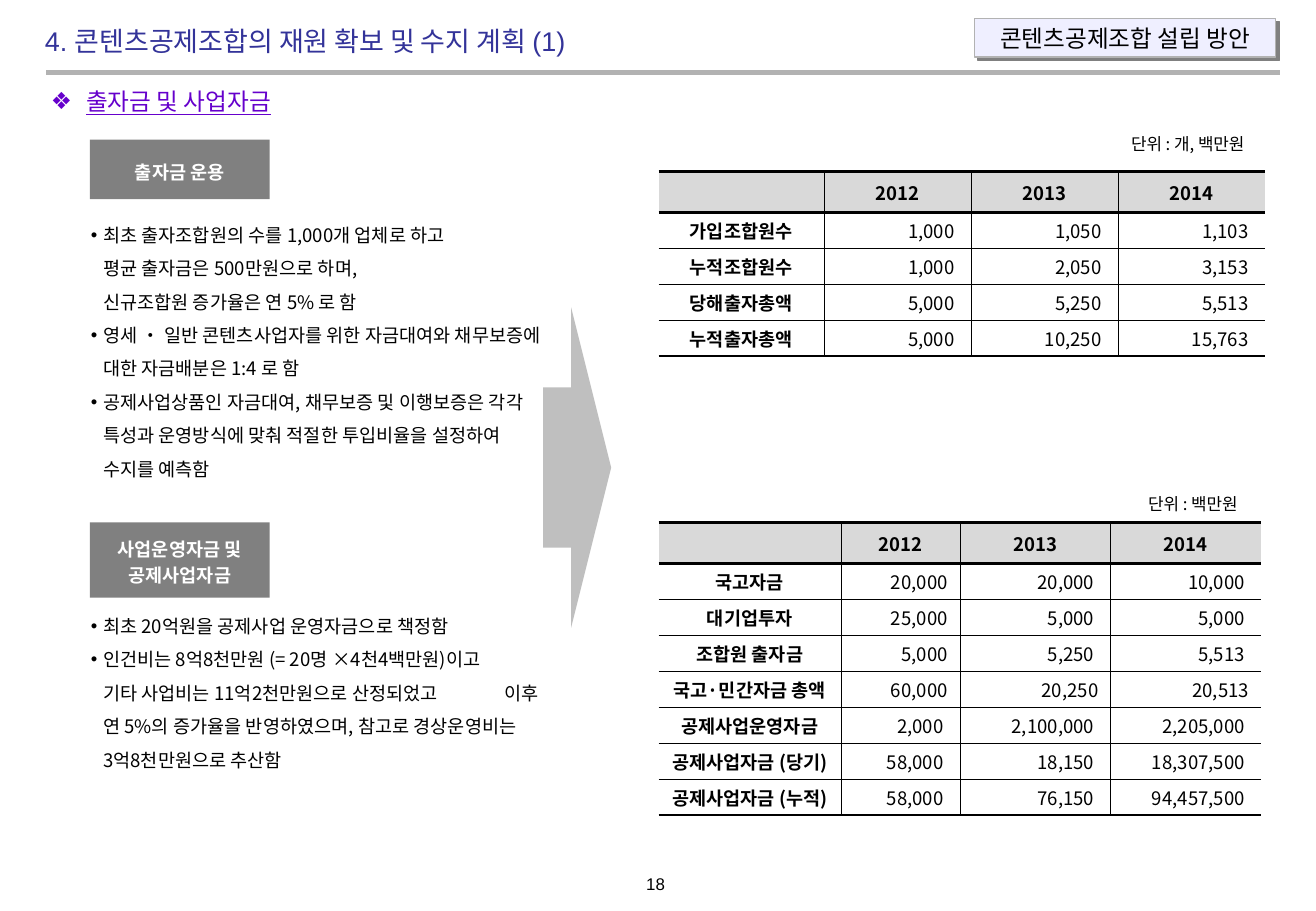
"""Build the slide on the capital and business funds of the content mutual aid association."""
from lxml.etree import SubElement
from pptx import Presentation
from pptx.dml.color import RGBColor
from pptx.enum.shapes import MSO_CONNECTOR, MSO_SHAPE
from pptx.enum.text import MSO_ANCHOR, MSO_AUTO_SIZE, PP_ALIGN
from pptx.oxml.ns import qn
from pptx.util import Inches, Pt

COLORS = {
    "black": "000000", "white": "FFFFFF", "title": "333399", "heading": "6600CC",
    "box": "808080", "arrow": "BFBFBF", "rule": "B2B2B2", "tag": "EFEFFF", "header": "D9D9D9",
}
KOREAN = "Noto Sans CJK KR"


def write_text(frame, lines, color="black", align=PP_ALIGN.LEFT, spacing=1.0, **font_format):
    """Fill a text frame with one paragraph per line and format it."""
    frame.vertical_anchor = MSO_ANCHOR.MIDDLE
    for index, line in enumerate(lines):
        paragraph = frame.paragraphs[0] if index == 0 else frame.add_paragraph()
        paragraph.text = line
        for name, value in {"alignment": align, "line_spacing": spacing}.items():
            setattr(paragraph, name, value)
        for run in paragraph.runs:
            for name, value in {"name": KOREAN, "size": Pt(11), **font_format}.items():
                setattr(run.font, name, value)
            run.font.color.rgb = RGBColor.from_string(COLORS[color])
            SubElement(run.font._element, qn("a:ea"), typeface=KOREAN)


def set_bullet(paragraph, character, indent):
    """Give a paragraph a hanging indent, with a bullet unless the character is empty."""
    properties = paragraph._p.get_or_add_pPr()
    properties.set("marL", str(Inches(indent)))
    properties.set("indent", str(Inches(-indent) if character else 0))
    if character:
        SubElement(properties, qn("a:buFont"), typeface="Arial")
        SubElement(properties, qn("a:buChar"), char=character)


presentation = Presentation()
presentation.slide_width = Inches(10.83)
presentation.slide_height = Inches(7.5)
slide = presentation.slides.add_slide(presentation.slide_layouts[5])
shapes = slide.shapes

header_rule = shapes.add_connector(
    MSO_CONNECTOR.STRAIGHT, Inches(0.38), Inches(0.6), Inches(10.53), Inches(0.6))
header_rule.line.color.rgb = RGBColor.from_string(COLORS["rule"])
header_rule.line.width = Pt(3)
SubElement(header_rule._element.spPr, qn("a:effectLst"))

title = shapes.title
title_place = {"left": 0.27, "top": 0.15, "width": 4.92, "height": 0.37}
for name, value in title_place.items():
    setattr(title, name, Inches(value))
title.text_frame.auto_size = MSO_AUTO_SIZE.NONE
title.text_frame.word_wrap = False
write_text(title.text_frame, ["4. 콘텐츠공제조합의 재원 확보 및 수지 계획 (1)"],
           "title", name="Arial", size=Pt(16))

labels = [
    (0.32, 0.68, 2.23, 0.31, "출자금 및 사업자금",
     {"color": "heading", "name": "Arial", "size": Pt(14), "underline": True}),
    (9.21, 0.98, 1.33, 0.4, "단위 : 개, 백만원", {"size": Pt(10)}),
    (9.35, 3.95, 1.33, 0.4, "단위 : 백만원", {"size": Pt(10)}),
    (4.96, 7.15, 0.87, 0.26, "18", {"name": "Arial", "size": Pt(10), "align": PP_ALIGN.CENTER}),
]
for left, top, width, height, text, text_format in labels:
    label = shapes.add_textbox(Inches(left), Inches(top), Inches(width), Inches(height))
    label.text_frame.word_wrap = True
    write_text(label.text_frame, [text], **text_format)
    if text_format.get("underline"):
        set_bullet(label.text_frame.paragraphs[0], "❖", 0.29)

blocks = [
    (MSO_SHAPE.RECTANGLE, 0.74, 1.15, 1.48, 0.49, "box", ["출자금 운용"]),
    (MSO_SHAPE.RECTANGLE, 0.74, 4.3, 1.48, 0.62, "box", ["사업운영자금 및", "공제사업자금"]),
    (MSO_SHAPE.RIGHT_ARROW, 4.47, 2.53, 0.56, 2.64, "arrow", []),
    (MSO_SHAPE.RECTANGLE, 8.02, 0.15, 2.48, 0.32, "tag", ["콘텐츠공제조합 설립 방안"]),
]
for kind, left, top, width, height, fill, lines in blocks:
    block = shapes.add_shape(kind, Inches(left), Inches(top), Inches(width), Inches(height))
    block.shadow.inherit = False
    block.fill.solid()
    block.fill.fore_color.rgb = RGBColor.from_string(COLORS[fill])
    block.line.fill.background()
    if fill == "arrow":
        block.adjustments[1] = 0.589
    elif fill == "box":
        write_text(block.text_frame, lines, "white", PP_ALIGN.CENTER, 1.2, bold=True)
    else:
        block.line.color.rgb = RGBColor.from_string(COLORS["rule"])
        block.line.width = Pt(0.75)
        effects = block._element.spPr.find(qn("a:effectLst"))
        shadow = SubElement(effects, qn("a:outerShdw"), dist=str(Pt(2.8)), dir="2700000")
        SubElement(shadow, qn("a:srgbClr"), val=COLORS["box"])
        block.text_frame.word_wrap = False
        write_text(block.text_frame, lines, align=PP_ALIGN.CENTER, name="Arial", size=Pt(14))

explanations = [
    (1.7, [
        ("•", "최초 출자조합원의 수를 1,000개 업체로 하고\v평균 출자금은 500만원으로 하며,"),
        ("", "신규조합원 증가율은 연 5% 로 함"),
        ("•", "영세 • 일반 콘텐츠사업자를 위한 자금대여와 채무보증에\v대한 자금배분은 1:4 로 함"),
        ("•", "공제사업상품인 자금대여, 채무보증 및 이행보증은 각각\v"
              "특성과 운영방식에 맞춰 적절한 투입비율을 설정하여\v수지를 예측함"),
    ]),
    (4.92, [
        ("•", "최초 20억원을 공제사업 운영자금으로 책정함"),
        ("•", "인건비는 8억8천만원 (= 20명 ×4천4백만원)이고\v"
              "기타 사업비는 11억2천만원으로 산정되었고\t이후\v"
              "연 5%의 증가율을 반영하였으며, 참고로 경상운영비는\v3억8천만원으로 추산함"),
    ]),
]
for top, items in explanations:
    explanation = shapes.add_textbox(Inches(0.65), Inches(top), Inches(3.98), Inches(1.48))
    frame = explanation.text_frame
    frame.word_wrap = True
    write_text(frame, [text for _, text in items], spacing=1.5)
    frame.vertical_anchor = MSO_ANCHOR.TOP
    for paragraph, (character, text) in zip(frame.paragraphs, items):
        set_bullet(paragraph, character, 0.1)
        if "\t" in text:
            tabs = SubElement(paragraph._p.pPr, qn("a:tabLst"))
            SubElement(tabs, qn("a:tab"), pos=str(Inches(3.4)), algn="l")

years = ["", "2012", "2013", "2014"]
tables = [
    (1.41, [1.36, 1.21, 1.21, 1.21], [
        years,
        ["가입조합원수", "1,000 ", "1,050 ", "1,103 "],
        ["누적조합원수", "1,000 ", "2,050 ", "3,153 "],
        ["당해출자총액", "5,000 ", "5,250 ", "5,513 "],
        ["누적출자총액", "5,000 ", "10,250 ", "15,763 "],
    ]),
    (4.3, [1.5, 0.98, 1.24, 1.24], [
        years,
        ["국고자금", "20,000", "20,000 ", "10,000 "],
        ["대기업투자", "25,000", "5,000 ", "5,000 "],
        ["조합원 출자금", "5,000", "5,250 ", "5,513 "],
        ["국고·민간자금 총액", "60,000", "20,250", "20,513"],
        ["공제사업운영자금", "2,000 ", "2,100,000 ", "2,205,000 "],
        ["공제사업자금 (당기)", "58,000 ", "18,150 ", "18,307,500 "],
        ["공제사업자금 (누적)", "58,000 ", "76,150 ", "94,457,500 "],
    ]),
]
for top, widths, rows in tables:
    table = shapes.add_table(len(rows), len(widths), Inches(5.42), Inches(top),
                             Inches(sum(widths)), Inches(0.3 * len(rows))).table
    for column, width in zip(table.columns, widths):
        column.width = Inches(width)
    for row_index, values in enumerate(rows):
        table.rows[row_index].height = Inches(0.296)
        for column_index, value in enumerate(values):
            cell = table.cell(row_index, column_index)
            is_header, is_label = row_index == 0, column_index == 0
            side = 0 if is_header or is_label else 0.1
            margins = {"margin_left": side, "margin_right": side,
                       "margin_top": 0.02, "margin_bottom": 0.02}
            for name, margin in margins.items():
                setattr(cell, name, Inches(margin))
            cell.vertical_anchor = MSO_ANCHOR.MIDDLE
            write_text(cell.text_frame, [value], bold=is_header or is_label,
                       align=PP_ALIGN.CENTER if is_header or is_label else PP_ALIGN.RIGHT)
            edges = {
                "a:lnL": 0 if is_label else 0.28,
                "a:lnR": 0 if column_index == len(widths) - 1 else 0.28,
                "a:lnT": 1.7 if row_index < 2 else 0.28,
                "a:lnB": 1.7 if row_index in (0, len(rows) - 1) else 0.28,
            }
            properties = cell._tc.get_or_add_tcPr()
            for tag, weight in edges.items():
                edge = SubElement(properties, qn(tag), w=str(Pt(weight)))
                paint = SubElement(edge, qn("a:solidFill" if weight else "a:noFill"))
                if weight:
                    SubElement(paint, qn("a:srgbClr"), val=COLORS["black"])
            if is_header:
                cell.fill.solid()
                cell.fill.fore_color.rgb = RGBColor.from_string(COLORS["header"])
            else:
                cell.fill.background()

presentation.save("out.pptx")
